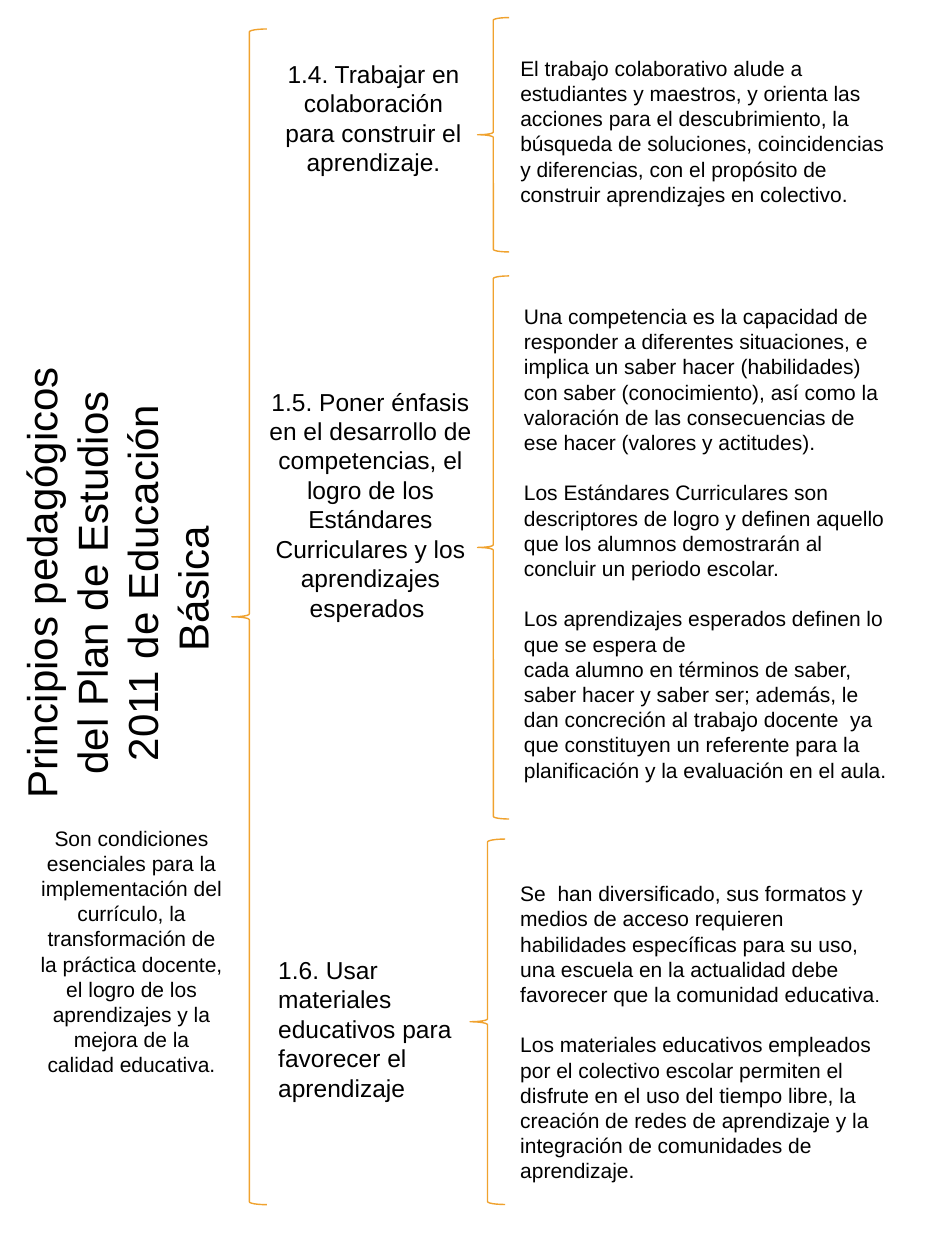
from pptx import Presentation
from pptx.dml.color import RGBColor
from pptx.enum.shapes import MSO_SHAPE as Shape
from pptx.enum.text import MSO_ANCHOR as Anchor, MSO_AUTO_SIZE as AutoSize, PP_ALIGN as Align
from pptx.util import Pt


def color(hex_string):
    return RGBColor.from_string(hex_string)


def fill_text(box, paragraphs, size, align):
    """Write (text, space before) pairs into the box."""
    frame = box.text_frame
    frame.word_wrap = True
    frame.auto_size = AutoSize.NONE
    frame.vertical_anchor = Anchor.TOP
    for index, (text, gap) in enumerate(paragraphs):
        para = frame.add_paragraph() if index else frame.paragraphs[0]
        para.text = text
        para.alignment = align
        para.line_spacing = Pt(1.2 * size)
        para.space_before = Pt(gap)
        para.font.size = Pt(size)
        para.font.name = "Arial"
        para.font.color.rgb = color("000000")


deck = Presentation()
deck.slide_width, deck.slide_height = Pt(540), Pt(720)
page = deck.slides.add_slide(deck.slide_layouts[5])

# Title turned to read upwards; the frame is placed by its centre
CENTER_X, CENTER_Y = 70.7, 333.1
title = page.shapes.title
title.width, title.height = Pt(269.3), Pt(131)
title.left = Pt(CENTER_X) - title.width // 2
title.top = Pt(CENTER_Y) - title.height // 2
title.rotation = 270
fill_text(title, [("Principios pedagógicos del Plan de Estudios 2011 de Educación Básica ", 0)],
          24, Align.CENTER)

# Braces: left, top, width, height
braces = [
    (132.5, 16.6, 20, 671.8),
    (272.9, 10.1, 18, 133.9),
    (272.9, 157.7, 18, 310.3),
    (268.6, 479.5, 20, 208.8),
]
for bounds in braces:
    brace = page.shapes.add_shape(Shape.LEFT_BRACE, *map(Pt, bounds))
    brace.shadow.inherit = False
    brace.fill.background()
    brace.line.color.rgb = color("F0A22E")
    brace.line.width = Pt(0.79)

# Text blocks: bounds, size, alignment, (paragraph, space before)
GAP = 14.4
blocks = [
    ((15.1, 468, 120.2, 152.6), 12, Align.CENTER, [
        ("Son condiciones esenciales para la implementación del currículo, la transformación "
         "de la práctica docente, el logro de los aprendizajes y la mejora de la calidad "
         "educativa.", 0)]),
    ((151.9, 30.2, 123.1, 74.9), 14, Align.CENTER, [
        ("1.4. Trabajar en colaboración para construir el aprendizaje.", 0)]),
    ((290.2, 28.1, 229, 94.3), 12, Align.LEFT, [
        ("El trabajo colaborativo alude a estudiantes y maestros, y orienta las acciones para "
         "el descubrimiento, la búsqueda de soluciones, coincidencias y diferencias, con el "
         "propósito de construir aprendizajes en colectivo.", 0)]),
    ((146.2, 217.4, 131, 143.3), 14, Align.CENTER, [
        ("1.5. Poner énfasis en el desarrollo de competencias, el logro de los Estándares "
         "Curriculares y los aprendizajes esperados ", 0)]),
    ((292.3, 169.9, 223.2, 283.7), 12, Align.LEFT, [
        ("Una competencia es la capacidad de responder a diferentes situaciones, e implica un "
         "saber hacer (habilidades) con saber (conocimiento), así como la valoración de las "
         "consecuencias de ese hacer (valores y actitudes).", 0),
        ("Los Estándares Curriculares son descriptores de logro y definen aquello que los "
         "alumnos demostrarán al concluir un periodo escolar.", GAP),
        ("Los aprendizajes esperados definen lo que se espera de", GAP),
        ("cada alumno en términos de saber, saber hacer y saber ser; además, le dan concreción "
         "al trabajo docente  ya que constituyen un referente para la planificación y la "
         "evaluación en el aula.", 0)]),
    ((151.9, 542.2, 128.9, 92.2), 14, Align.LEFT, [
        ("1.6. Usar materiales educativos para favorecer el aprendizaje", 0)]),
    ((290.2, 499.7, 224, 181.4), 12, Align.LEFT, [
        ("Se  han diversificado, sus formatos y medios de acceso requieren habilidades "
         "específicas para su uso, una escuela en la actualidad debe favorecer que la "
         "comunidad educativa", 0),
        ("Los materiales educativos empleados por el colectivo escolar permiten el disfrute en "
         "el uso del tiempo libre, la creación de redes de aprendizaje y la integración de "
         "comunidades de aprendizaje.", GAP)]),
]
for bounds, size, align, paragraphs in blocks:
    box = page.shapes.add_textbox(*map(Pt, bounds))
    fill_text(box, paragraphs, size, align)

# The first paragraph of the last block ends with a full stop in another font
full_stop = box.text_frame.paragraphs[0].add_run()
full_stop.text = "."
full_stop.font.name = "Cabin"

deck.save("out.pptx")
